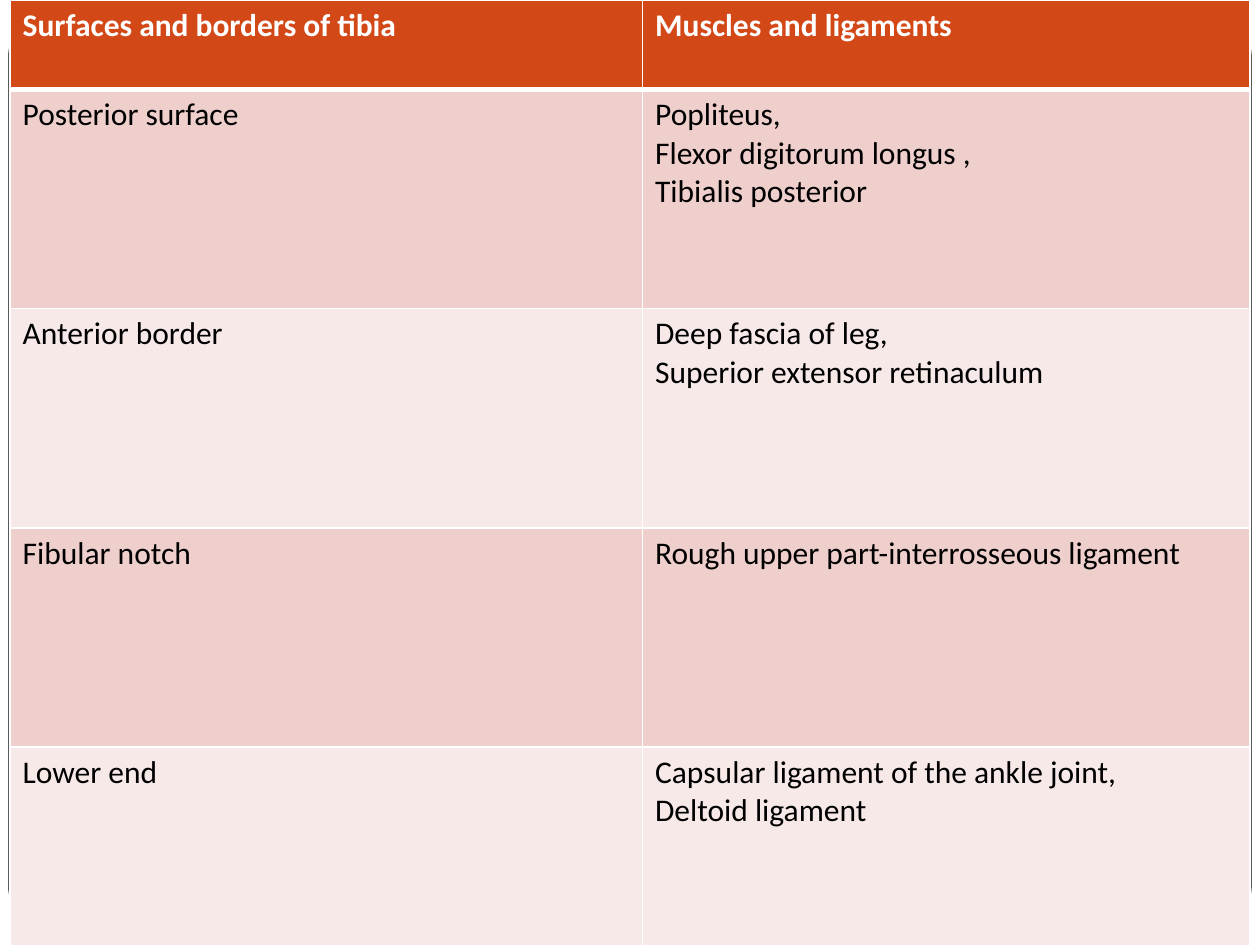
from lxml.etree import SubElement
from pptx import Presentation
from pptx.dml.color import RGBColor
from pptx.enum.shapes import MSO_SHAPE
from pptx.oxml.ns import qn
from pptx.util import Inches, Pt

HEADER = ("Surfaces and borders of tibia", "Muscles and ligaments")
ATTACHMENTS = [
    ("Posterior surface", "Popliteus,\nFlexor digitorum longus ,\nTibialis posterior"),
    ("Anterior border", "Deep fascia of leg,\nSuperior extensor retinaculum"),
    ("Fibular notch", "Rough upper part-interrosseous ligament"),
    ("Lower end", "Capsular ligament of the ankle joint,\nDeltoid ligament"),
]
COLUMN_WIDTHS = (5.02, 4.82)
HEADER_HEIGHT = 0.71
BAND_FILLS = ("EFCFCC", "F7E9E8")


def color(value):
    """Return the colour for a hex string."""
    return RGBColor.from_string(value)


def set_borders(cell, bottom_width, top_width):
    """Give a cell white borders with the given bottom and top widths in points."""
    properties = cell._tc.get_or_add_tcPr()
    widths = {"a:lnL": 1, "a:lnR": 1, "a:lnT": top_width, "a:lnB": bottom_width}
    for index, (tag, width) in enumerate(widths.items()):
        line = SubElement(properties, qn(tag), w=str(Pt(width)))
        fill = SubElement(line, qn("a:solidFill"))
        SubElement(fill, qn("a:srgbClr"), val="FFFFFF")
        properties.insert(index, line)


def fill_cell(cell, text, fill, font_color, bold):
    """Write and colour one table cell."""
    cell.fill.solid()
    cell.fill.fore_color.rgb = color(fill)
    cell.text_frame.text = text
    for paragraph in cell.text_frame.paragraphs:
        for run in paragraph.runs:
            run.font.name = "Calibri"
            run.font.size = Pt(18)
            run.font.bold = bold
            run.font.color.rgb = color(font_color)


def add_frame(slide, left, top, width, height):
    """Draw the thin rounded frame behind the table."""
    shape = slide.shapes.add_shape(MSO_SHAPE.ROUNDED_RECTANGLE, left, top, width, height)
    shape.adjustments[0] = 0.05
    shape.shadow.inherit = False
    shape.fill.solid()
    shape.fill.fore_color.rgb = color("FFFFFF")
    shape.line.color.rgb = color("000000")
    shape.line.width = Pt(0.5)


def add_attachment_table(slide, left, top, width, height):
    """Place the table of tibia surfaces and their attachments."""
    rows = [HEADER, *ATTACHMENTS]
    table = slide.shapes.add_table(len(rows), len(HEADER), left, top, width, height).table
    for column, column_width in zip(table.columns, COLUMN_WIDTHS):
        column.width = Inches(column_width)
    header_height = Inches(HEADER_HEIGHT)
    body_height = (height - header_height) // len(ATTACHMENTS)
    for row_index, texts in enumerate(rows):
        is_header = row_index == 0
        table.rows[row_index].height = header_height if is_header else body_height
        fill = "D34817" if is_header else BAND_FILLS[(row_index - 1) % 2]
        font_color = "FFFFFF" if is_header else "000000"
        for column_index, text in enumerate(texts):
            cell = table.cell(row_index, column_index)
            fill_cell(cell, text, fill, font_color, is_header)
            set_borders(cell, 3 if is_header else 1, 3 if row_index == 1 else 1)


def main():
    """Build and save the slide."""
    presentation = Presentation()
    presentation.slide_width = Inches(10)
    presentation.slide_height = Inches(7.5)
    slide = presentation.slides.add_slide(presentation.slide_layouts[6])
    add_frame(slide, Inches(0.07), Inches(0.08), Inches(9.86), Inches(7.32))
    add_attachment_table(slide, Inches(0.08), Inches(0), Inches(9.84), Inches(7.67))
    presentation.save("out.pptx")


if __name__ == "__main__":
    main()
